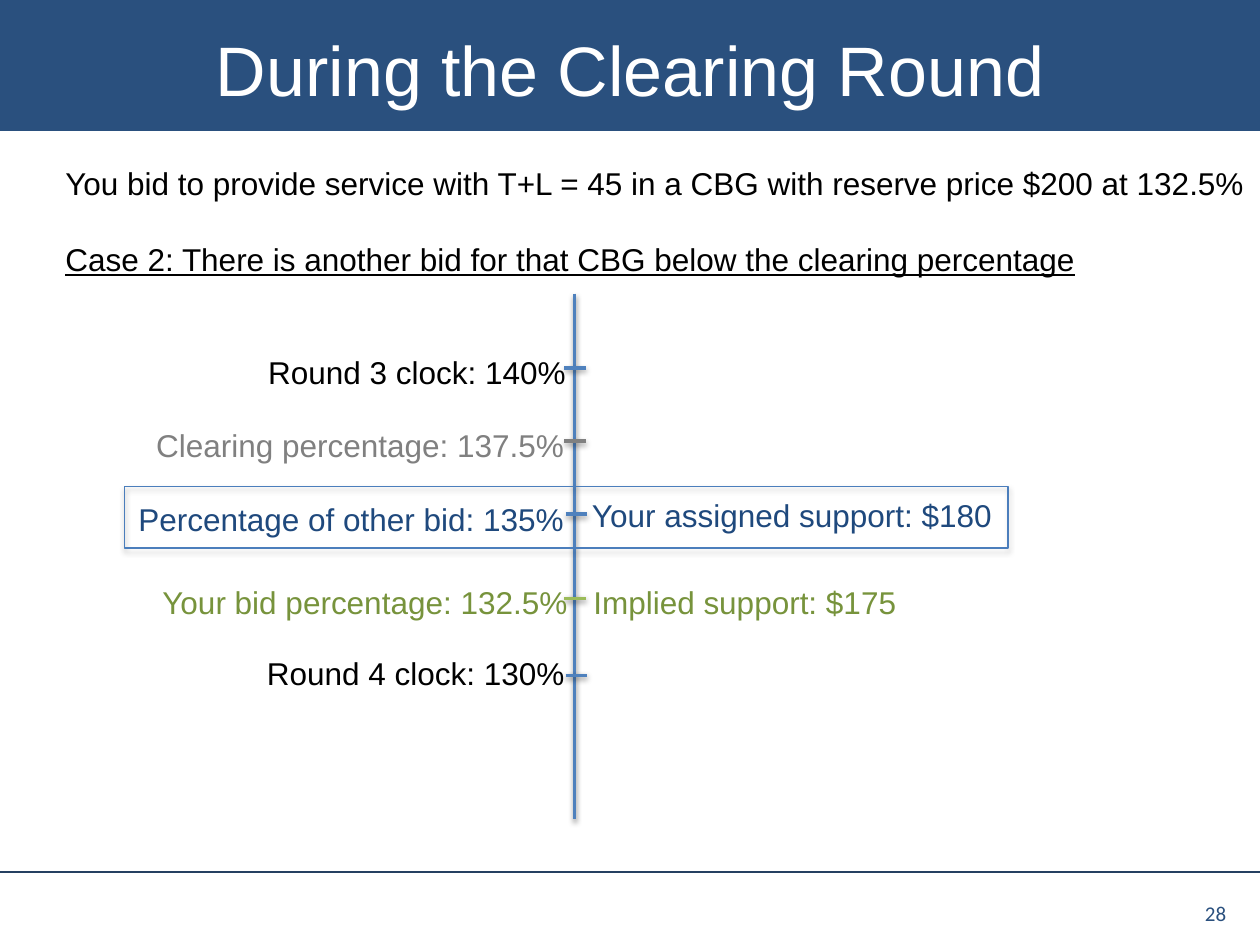
from lxml import etree
from pptx import Presentation
from pptx import util as u
from pptx.dml import color
from pptx.enum import shapes, text
from pptx.oxml import ns

hues = {"band": "2A507E", "rule": "254061", "axis": "4F81BD", "gray": "808080",
        "lime": "9BBB59", "green": "77933C", "navy": "1F497D", "frame": "4B7EBC",
        "black": "000000", "white": "FFFFFF"}
rgb = {name: color.RGBColor.from_string(code) for name, code in hues.items()}
base = {"size": u.Pt(18), "name": "Arial"}

deck = Presentation()
deck.slide_width, deck.slide_height = u.Inches(10), u.Inches(7.5)
slide = deck.slides.add_slide(deck.slide_layouts[6])
draw = slide.shapes


def shade(shape, alpha=0, dist=0):
    list_ = etree.SubElement(shape._element.spPr, ns.qn("a:effectLst"))
    if alpha:
        glow = etree.SubElement(list_, ns.qn("a:outerShdw"), blurRad="40000",
                                dist=str(dist), dir="5400000", rotWithShape="0")
        ink = etree.SubElement(glow, ns.qn("a:srgbClr"), val=hues["black"])
        etree.SubElement(ink, ns.qn("a:alpha"), val=str(alpha * 1000))


def write(words, spot, hue, wrap=True, align="LEFT", anchor="TOP", tab=0, **extra):
    box = draw.add_textbox(*map(u.Inches, spot))
    frame = box.text_frame
    frame.word_wrap = wrap
    frame.vertical_anchor = text.MSO_ANCHOR[anchor]
    para = frame.paragraphs[0]
    para.alignment = text.PP_ALIGN[align]
    if tab:
        stops = etree.SubElement(para._p.get_or_add_pPr(), ns.qn("a:tabLst"))
        etree.SubElement(stops, ns.qn("a:tab"), pos=str(u.Inches(tab)), algn="l")
    run = para.add_run()
    run.text = words
    for key, value in {**base, **extra}.items():
        setattr(run.font, key, value)
    run.font.color.rgb = rgb[hue]
    return frame


band = draw.add_shape(shapes.MSO_SHAPE.RECTANGLE, 0, 0, u.Inches(10), u.Inches(1.04))
band.fill.solid()
band.fill.fore_color.rgb = rgb["band"]
band.line.fill.background()
band.shadow.inherit = False

write("During the Clearing Round", (0.5, 0.08, 9, 0.92), "white",
      align="CENTER", anchor="MIDDLE", size=u.Pt(40))
write("28", (7.5, 7, 2.33, 0.4), "band", align="RIGHT", anchor="BOTTOM",
      size=u.Pt(12), name="Calibri")

body = write("You bid to provide service with T+L = 45 in a CBG with reserve price $200 at 132.5%",
             (0.42, 1.25, 9.58, 1.01), "black")
case = body.add_paragraph()
case.space_before = u.Pt(22)
run = case.add_run()
run.text = "Case 2: There is another bid for that CBG below the clearing percentage"
for key, value in {**base, "underline": True}.items():
    setattr(run.font, key, value)
run.font.color.rgb = rgb["black"]

lines = [(0, 6.92, 10, 6.92, "rule", 1.5, 0),
         (4.56, 2.33, 4.56, 6.5, "axis", 2, 38)]
ticks = [(4.48, 2.92, "axis"), (4.48, 3.5, "gray"), (4.49, 4.08, "axis"),
         (4.48, 4.75, "lime"), (4.49, 5.36, "axis")]
lines += [(x, y, x + 0.17, y, hue, 2, 38) for x, y, hue in ticks]
for *ends, hue, width, alpha in lines:
    line = draw.add_connector(shapes.MSO_CONNECTOR.STRAIGHT, *map(u.Inches, ends))
    line.line.color.rgb = rgb[hue]
    line.line.width = u.Pt(width)
    shade(line, alpha, 20000)

labels = [("Round 3 clock: 140%", 2.03, 2.75, 2.59, "black", False, 0),
          ("Clearing percentage: 137.5%", 1.14, 3.33, 3.69, "gray", True, 0),
          ("Percentage of other bid: 135%", 1, 3.92, 3.6, "navy", True, 0),
          ("Your assigned support: $180", 4.6, 3.89, 3.47, "navy", True, 0),
          ("Your bid percentage: 132.5%\tImplied support: $175",
           1.19, 4.58, 6.48, "green", True, 3.42),
          ("Round 4 clock: 130%", 2.02, 5.14, 2.59, "black", False, 0)]
for words, x, y, width, hue, wrap, tab in labels:
    write(words, (x, y, width, 0.4), hue, wrap, tab=tab)

frame = draw.add_shape(shapes.MSO_SHAPE.RECTANGLE,
                       *map(u.Inches, (0.99, 3.86, 7.01, 0.49)))
frame.fill.background()
frame.line.color.rgb = rgb["frame"]
frame.line.width = u.Pt(0.75)
shade(frame, 35, 23000)

deck.save("out.pptx")
